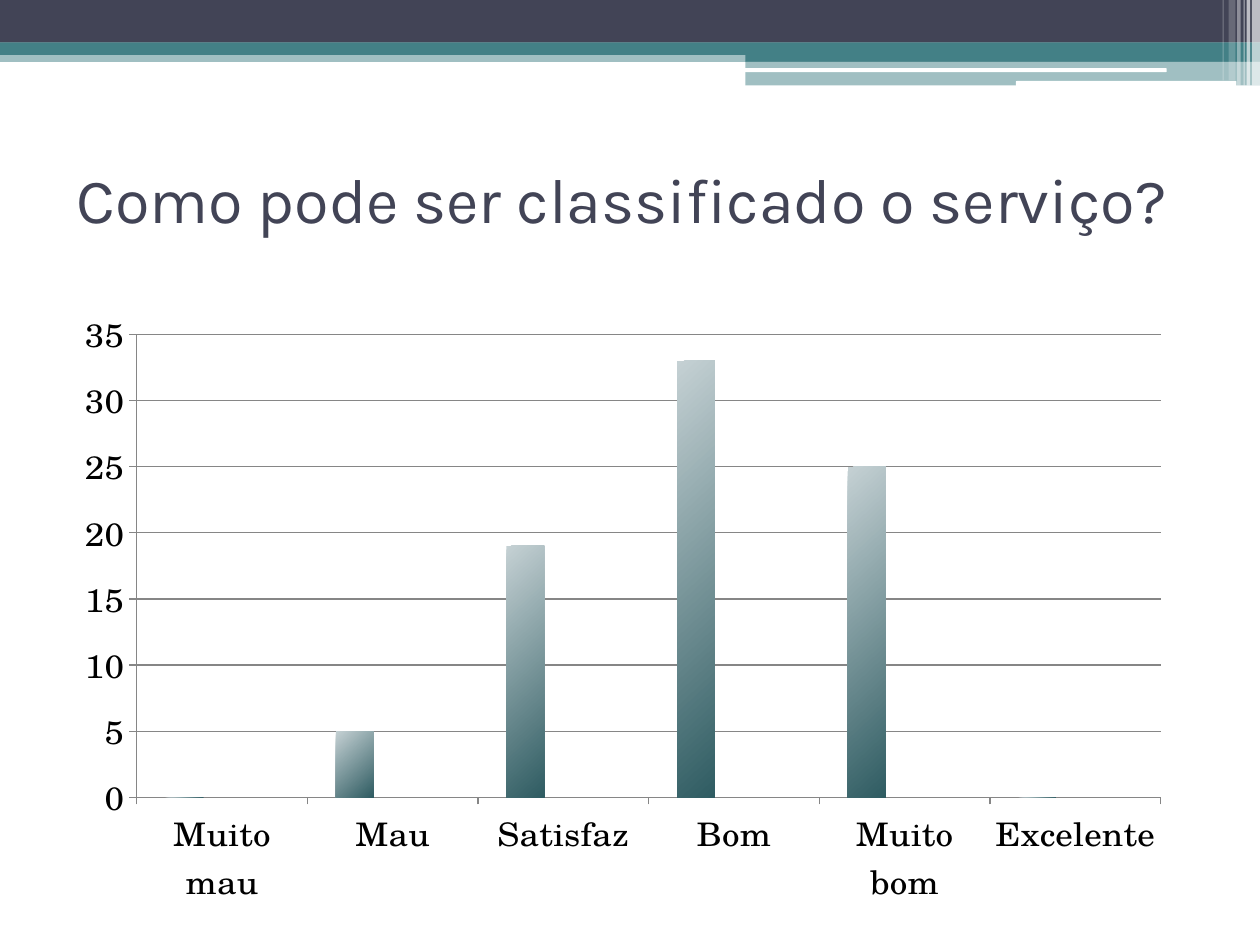
from dataclasses import dataclass

from lxml import etree
from pptx import Presentation
from pptx import util as u
from pptx.chart.data import CategoryChartData
from pptx.dml.color import RGBColor
from pptx.enum import chart as charts, shapes, text
from pptx.oxml import parse_xml
from pptx.oxml.ns import nsdecls, qn


@dataclass(frozen=True)
class Theme:
    dark: str = "424456"
    teal: str = "438086"
    white: str = "FFFFFF"
    black: str = "000000"
    grid: str = "868686"
    bar_light: str = "C5D1D4"
    bar_dark: str = "2F5C62"
    series: tuple = ("53548A", "438086", "A04DA3")
    title_font: str = "Karla"
    chart_font: str = "TeX Gyre Schola"
    title_size: int = 36
    axis_size: int = 20


def rgb(value):
    return RGBColor.from_string(value)


class SlideBuilder:
    def __init__(self, slide, theme):
        self.slide = slide
        self.theme = theme

    def bar(self, left, top, width, height, color, opacity=100, rounded=False):
        kind = shapes.MSO_SHAPE.ROUNDED_RECTANGLE if rounded else shapes.MSO_SHAPE.RECTANGLE
        shape = self.slide.shapes.add_shape(kind, *map(u.Pt, (left, top, width, height)))
        shape.shadow.inherit = False
        shape.line.fill.background()
        shape.fill.solid()
        shape.fill.fore_color.rgb = rgb(color)
        if opacity < 100:
            color_element = shape.fill._xPr.find(".//" + qn("a:srgbClr"))
            etree.SubElement(color_element, qn("a:alpha"), val=str(opacity * 1000))

    def title(self, left, top, width, height, wording):
        box = self.slide.shapes.add_textbox(*map(u.Pt, (left, top, width, height)))
        frame = box.text_frame
        frame.word_wrap = True
        frame.vertical_anchor = text.MSO_ANCHOR.MIDDLE
        paragraph = frame.paragraphs[0]
        paragraph.text = wording
        paragraph.font.name = self.theme.title_font
        paragraph.font.size = u.Pt(self.theme.title_size)
        paragraph.font.color.rgb = rgb(self.theme.dark)

    def column_chart(self, left, top, width, height, categories, series, plot_area):
        data = CategoryChartData()
        data.categories = categories
        for name, values in series:
            data.add_series(name, values)
        chart = self.slide.shapes.add_chart(
            charts.XL_CHART_TYPE.COLUMN_CLUSTERED,
            *map(u.Pt, (left, top, width, height)), data).chart
        chart.has_legend = False
        chart.has_title = False
        chart.font.name = self.theme.chart_font
        chart.font.size = u.Pt(self.theme.axis_size)
        chart.font.color.rgb = rgb(self.theme.black)
        plot = chart.plots[0]
        plot.vary_by_categories = False
        plot.gap_width = 150
        plot.overlap = 0
        for column, color in zip(plot.series, self.theme.series):
            column.format.fill.solid()
            column.format.fill.fore_color.rgb = rgb(color)
        self.shade(plot.series[0].format.fill)
        self.style_axes(chart)
        self.place_plot(chart, plot_area)

    def shade(self, fill):
        """Diagonal gradient, light at top left and dark at bottom right."""
        fill.gradient()
        fill.gradient_angle = 315
        for stop, color in zip(fill.gradient_stops, (self.theme.bar_light, self.theme.bar_dark)):
            stop.color.rgb = rgb(color)

    def style_axes(self, chart):
        value_axis = chart.value_axis
        value_axis.minimum_scale, value_axis.maximum_scale = 0, 35
        value_axis.major_unit = 5
        value_axis.has_major_gridlines = True
        for line in (value_axis.format.line, chart.category_axis.format.line,
                     value_axis.major_gridlines.format.line):
            line.color.rgb = rgb(self.theme.grid)
            line.width = u.Pt(0.75)
        for axis in (value_axis, chart.category_axis):
            axis.major_tick_mark = charts.XL_TICK_MARK.OUTSIDE
            axis.tick_labels.font.size = u.Pt(self.theme.axis_size)

    def place_plot(self, chart, plot_area):
        """Fix the inner plot area, given as fractions of the chart."""
        fractions = "".join(f'<c:{tag} val="{value}"/>' for tag, value in zip("xywh", plot_area))
        layout = parse_xml(
            f'<c:layout {nsdecls("c")}><c:manualLayout><c:layoutTarget val="inner"/>'
            f'<c:xMode val="edge"/><c:yMode val="edge"/>{fractions}'
            '</c:manualLayout></c:layout>')
        area = chart._chartSpace.find(".//" + qn("c:plotArea"))
        for old in area.findall(qn("c:layout")):
            area.remove(old)
        area.insert(0, layout)


def main():
    theme = Theme()
    presentation = Presentation()
    presentation.slide_width, presentation.slide_height = u.Pt(720), u.Pt(540)
    slide = presentation.slides.add_slide(presentation.slide_layouts[6])
    builder = SlideBuilder(slide, theme)

    # Header bands: left, top, width, height, colour, opacity
    for band in (
        (0, 28.8, 720, 6.6, theme.teal, 50),
        (0, 0, 720, 24.4, theme.dark, 100),
        (0, 24.2, 720, 7.2, theme.teal, 100),
        (426, 28, 294, 7.2, theme.teal, 100),
        (426, 34.8, 294, 14, theme.teal, 50),
    ):
        builder.bar(*band)
    builder.bar(425.5, 39, 241.2, 2.2, theme.white, rounded=True)
    builder.bar(580.5, 46.3, 126, 2.9, theme.white, rounded=True)

    # Pale stripes at the right end: left, width, height, opacity
    for left, width, height, opacity in (
        (715.4, 4.6, 49, 65),
        (712.4, 2, 49, 65),
        (710.6, 0.7, 49, 60),
        (707, 2, 49, 40),
        (702, 4, 46, 20),
        (698.6, 0.7, 46, 30),
    ):
        builder.bar(left, 0, width, height, theme.white, opacity)

    builder.title(36.7, 71.3, 648, 84.2, "Como pode ser classificado o serviço?")
    categories = ("Muito mau", "Mau", "Satisfaz", "Bom", "Muito bom", "Excelente")
    empty = (None,) * len(categories)
    builder.column_chart(
        36, 177.1, 648, 340.6, categories,
        (("Series 1", (0, 5, 19, 33, 25, 0)), ("Series 2", empty), ("Series 3", empty)),
        plot_area=(0.065, 0.025, 0.903, 0.842))
    presentation.save("out.pptx")


if __name__ == "__main__":
    main()
